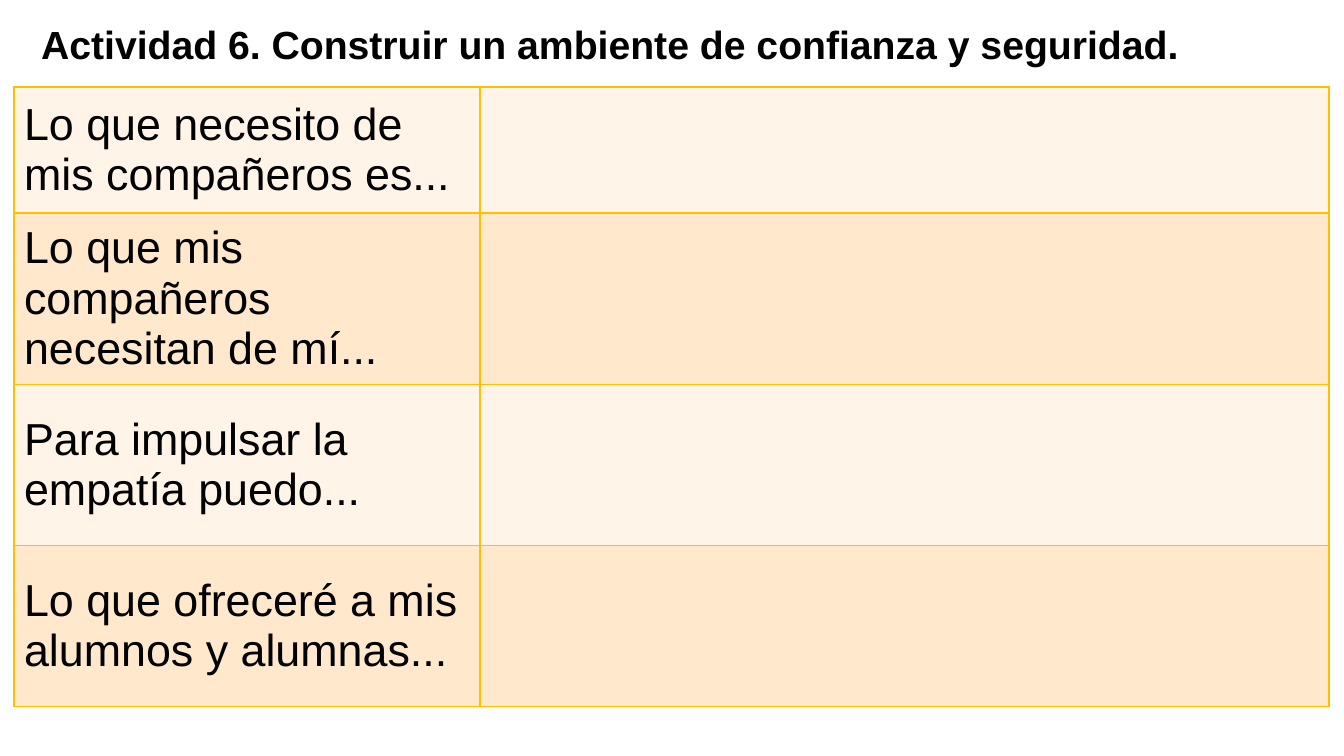
from lxml.etree import SubElement
from pptx import Presentation
from pptx.dml.color import RGBColor
from pptx.enum.text import MSO_ANCHOR, MSO_AUTO_SIZE, PP_ALIGN
from pptx.oxml.ns import qn
from pptx.util import Pt

# Content
TITLE = "Actividad 6. Construir un ambiente de confianza y seguridad."
PROMPTS = [
    "Lo que necesito de mis compañeros es...",
    "Lo que mis compañeros necesitan de mí...",
    "Para impulsar la empatía puedo...",
    "Lo que ofreceré a mis alumnos y alumnas...",
]

# Layout in px
SLIDE_SIZE = (1344, 756)
TITLE_BOX = (31, 15, 1240, 57)
TABLE_ORIGIN = (14, 87)
COLUMN_WIDTHS = [466, 849]
ROW_HEIGHTS = [126, 161, 161, 161]

# Style
FONT = "Arial"
TEXT_COLOR = "000000"
BORDER_COLOR = "FFC000"
BAND_COLORS = ["FFF4E7", "FFE8CC"]


def px(length):
    return round(length * 914400 / 100.8)


def color(hex_text):
    return RGBColor.from_string(hex_text)


def format_font(font, size, bold=False):
    font.name = FONT
    font.size = Pt(size)
    font.bold = bold
    font.color.rgb = color(TEXT_COLOR)


def add_borders(cell):
    properties = cell._tc.get_or_add_tcPr()
    for side in ("a:lnL", "a:lnR", "a:lnT", "a:lnB"):
        line = SubElement(properties, qn(side), w=str(Pt(1)))
        fill = SubElement(line, qn("a:solidFill"))
        SubElement(fill, qn("a:srgbClr"), val=BORDER_COLOR)


def add_title(slide):
    title = slide.shapes.title
    title.left, title.top, title.width, title.height = map(px, TITLE_BOX)
    frame = title.text_frame
    frame.text = TITLE
    frame.word_wrap = True
    frame.auto_size = MSO_AUTO_SIZE.SHAPE_TO_FIT_TEXT
    frame.vertical_anchor = MSO_ANCHOR.TOP
    paragraph = frame.paragraphs[0]
    paragraph.alignment = PP_ALIGN.LEFT
    format_font(paragraph.runs[0].font, 28, bold=True)


def add_prompt_table(slide):
    size = (sum(COLUMN_WIDTHS), sum(ROW_HEIGHTS))
    table = slide.shapes.add_table(
        len(PROMPTS), len(COLUMN_WIDTHS), *map(px, TABLE_ORIGIN + size)
    ).table
    table.first_row = False
    for column, width in zip(table.columns, COLUMN_WIDTHS):
        column.width = px(width)

    for index, (row, prompt) in enumerate(zip(table.rows, PROMPTS)):
        row.height = px(ROW_HEIGHTS[index])
        for cell in row.cells:
            add_borders(cell)
            cell.fill.solid()
            cell.fill.fore_color.rgb = color(BAND_COLORS[index % 2])
            cell.vertical_anchor = MSO_ANCHOR.MIDDLE
        prompt_cell = row.cells[0]
        prompt_cell.text_frame.text = prompt
        format_font(prompt_cell.text_frame.paragraphs[0].runs[0].font, 32)


def main():
    presentation = Presentation()
    presentation.slide_width, presentation.slide_height = map(px, SLIDE_SIZE)
    slide = presentation.slides.add_slide(presentation.slide_layouts[5])
    add_title(slide)
    add_prompt_table(slide)
    presentation.save("out.pptx")


if __name__ == "__main__":
    main()
